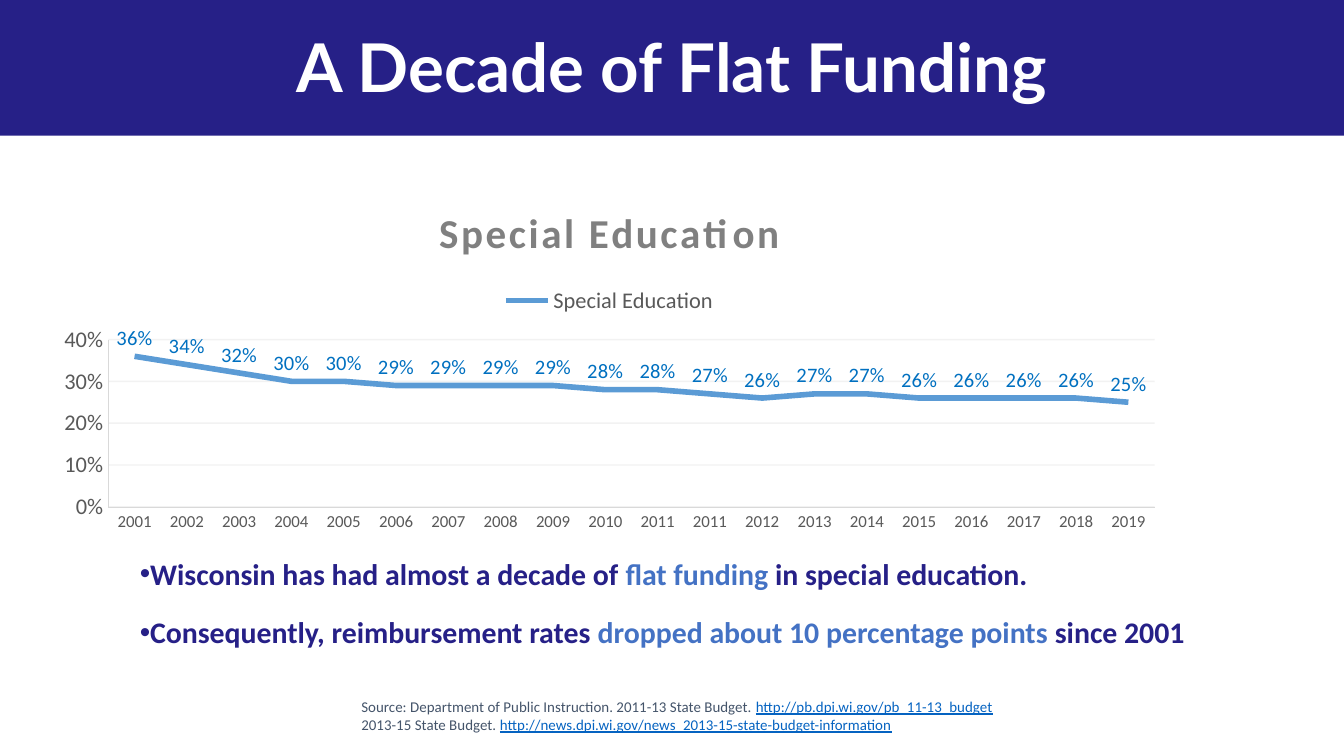
from lxml import etree
from pptx import Presentation
from pptx import util as u
from pptx.chart.data import CategoryChartData
from pptx.dml.color import RGBColor
from pptx.enum import chart as ch
from pptx.enum import shapes, text
from pptx.oxml.ns import qn

NAVY = RGBColor(0x26, 0x20, 0x87)
WHITE = RGBColor(0xFF, 0xFF, 0xFF)
ACCENT = RGBColor(0x44, 0x72, 0xC4)
SLATE = RGBColor(0x44, 0x54, 0x6A)
LINK = RGBColor(0x05, 0x63, 0xC1)
BLACK = RGBColor(0, 0, 0)
TITLE_GRAY = RGBColor(0x80, 0x80, 0x80)
AXIS_GRAY = RGBColor(0x59, 0x59, 0x59)
RULE_GRAY = RGBColor(0xD9, 0xD9, 0xD9)
SERIES_BLUE = RGBColor(0x5B, 0x9B, 0xD5)
LABEL_BLUE = RGBColor(0x00, 0x70, 0xC0)

YEARS = [*range(2001, 2012), *range(2011, 2020)]
RATES = [36, 34, 32, 30, 30, 29, 29, 29, 29, 28,
         28, 27, 26, 27, 27, 26, 26, 26, 26, 25]


def place(shape, box):
    shape.left, shape.top, shape.width, shape.height = map(u.Inches, box)


def style_font(font, size, color, bold=False, name="Calibri"):
    font.name = name
    font.size = u.Pt(size)
    font.bold = bold
    font.color.rgb = color


def add_span(para, words, size, color, bold=False, name="Calibri"):
    span = para.add_run()
    span.text = words
    style_font(span.font, size, color, bold, name)
    return span


def add_header(page, box):
    left, top, width, height = box
    band = page.shapes.add_shape(shapes.MSO_SHAPE.RECTANGLE, *map(u.Inches, box))
    band.shadow.inherit = False
    band.fill.solid()
    band.fill.fore_color.rgb = NAVY
    band.line.fill.background()
    page.shapes._spTree.insert(2, band._element)

    title = page.shapes.title
    place(title, (left, top, width, height + 0.05))
    frame = title.text_frame
    frame.auto_size = text.MSO_AUTO_SIZE.NONE
    frame.vertical_anchor = text.MSO_ANCHOR.MIDDLE
    para = frame.paragraphs[0]
    para.alignment = text.PP_ALIGN.CENTER
    para.line_spacing = 0.9
    add_span(para, "A Decade of Flat Funding", 36, WHITE, True, "Lato")


def style_axis(axis, size):
    axis.major_tick_mark = ch.XL_TICK_MARK.NONE
    axis.minor_tick_mark = ch.XL_TICK_MARK.NONE
    style_font(axis.tick_labels.font, size, AXIS_GRAY)
    axis.format.line.color.rgb = RULE_GRAY
    axis.format.line.width = u.Pt(0.25)


def add_rate_chart(page, box):
    data = CategoryChartData(number_format="0%")
    data.categories = [str(year) for year in YEARS]
    data.add_series("Special Education", [rate / 100 for rate in RATES])
    chart = page.shapes.add_chart(
        ch.XL_CHART_TYPE.LINE, *map(u.Inches, box), data).chart
    style_font(chart.font, 10, BLACK)

    chart.has_title = True
    para = chart.chart_title.text_frame.paragraphs[0]
    heading = add_span(para, "Special Education", 22, TITLE_GRAY, True)
    heading.font._element.set("spc", "150")
    chart.chart_title.include_in_layout = False

    chart.has_legend = True
    chart.legend.position = ch.XL_LEGEND_POSITION.TOP
    chart.legend.include_in_layout = False
    style_font(chart.legend.font, 12, AXIS_GRAY)

    style_axis(chart.category_axis, 9)
    axis = chart.value_axis
    style_axis(axis, 12)
    axis.minimum_scale, axis.maximum_scale, axis.major_unit = 0, 0.4, 0.1
    axis.tick_labels.number_format = "0%"
    axis.tick_labels.number_format_is_linked = False
    grid = axis.major_gridlines.format.line
    grid.color.rgb = RULE_GRAY
    grid.width = u.Pt(0.75)
    for color in axis.major_gridlines._xAx.majorGridlines.iter(qn("a:srgbClr")):
        etree.SubElement(color, qn("a:alpha"), val="32000")

    plot = chart.plots[0]
    plot.vary_by_categories = False
    series = plot.series[0]
    series.smooth = False
    series.marker.style = ch.XL_MARKER_STYLE.NONE
    series.format.line.color.rgb = SERIES_BLUE
    series.format.line.width = u.Pt(3)
    labels = series.data_labels
    labels.show_value = True
    labels.number_format = "0%"
    labels.number_format_is_linked = False
    labels.position = ch.XL_LABEL_POSITION.ABOVE
    style_font(labels.font, 11, LABEL_BLUE)


def add_findings(page, box):
    body = page.placeholders[1]
    place(body, box)
    frame = body.text_frame
    frame.auto_size = text.MSO_AUTO_SIZE.NONE
    frame.vertical_anchor = text.MSO_ANCHOR.MIDDLE
    findings = [
        (0.23, "Wisconsin has had almost a decade of ", "flat funding ",
         "in special education."),
        (0.19, "Consequently, reimbursement rates ",
         "dropped about 10 percentage points", " since 2001"),
    ]
    for index, (hang, *parts) in enumerate(findings):
        para = frame.add_paragraph() if index else frame.paragraphs[0]
        para.level = 1
        para.space_before = u.Pt(0)
        para.space_after = u.Pt(12)
        props = para._p.get_or_add_pPr()
        props.set("marL", "0")
        props.set("indent", str(-u.Inches(hang)))
        etree.SubElement(props, qn("a:buFont"), typeface="Arial")
        etree.SubElement(props, qn("a:buChar"), char="•")
        for words, color in zip(parts, (NAVY, ACCENT, NAVY)):
            add_span(para, words, 16, color, True)


def add_sources(page, box):
    frame = page.shapes.add_textbox(*map(u.Inches, box)).text_frame
    frame.word_wrap = True
    frame.auto_size = text.MSO_AUTO_SIZE.SHAPE_TO_FIT_TEXT
    para = frame.paragraphs[0]
    sources = [
        ("Source: Department of Public Instruction. 2011-13 State Budget. ",
         "http://pb.dpi.wi.gov/pb_11-13_budget"),
        ("2013-15 State Budget. ",
         "http://news.dpi.wi.gov/news_2013-15-state-budget-information"),
    ]
    for index, (label, address) in enumerate(sources):
        if index:
            para.add_line_break()
        add_span(para, label, 8, SLATE)
        add_span(para, address, 8, LINK).font.underline = True


def main():
    deck = Presentation()
    deck.slide_width, deck.slide_height = u.Inches(10), u.Inches(10 * 9 / 16)
    page = deck.slides.add_slide(deck.slide_layouts[1])
    add_header(page, (0, 0, 10, 1.01))
    add_findings(page, (0.94, 4.01, 8.43, 0.95))
    add_sources(page, (2.59, 5.14, 5.29, 0.37))
    add_rate_chart(page, (0.31, 1.36, 8.45, 2.65))
    deck.save("out.pptx")


if __name__ == "__main__":
    main()
